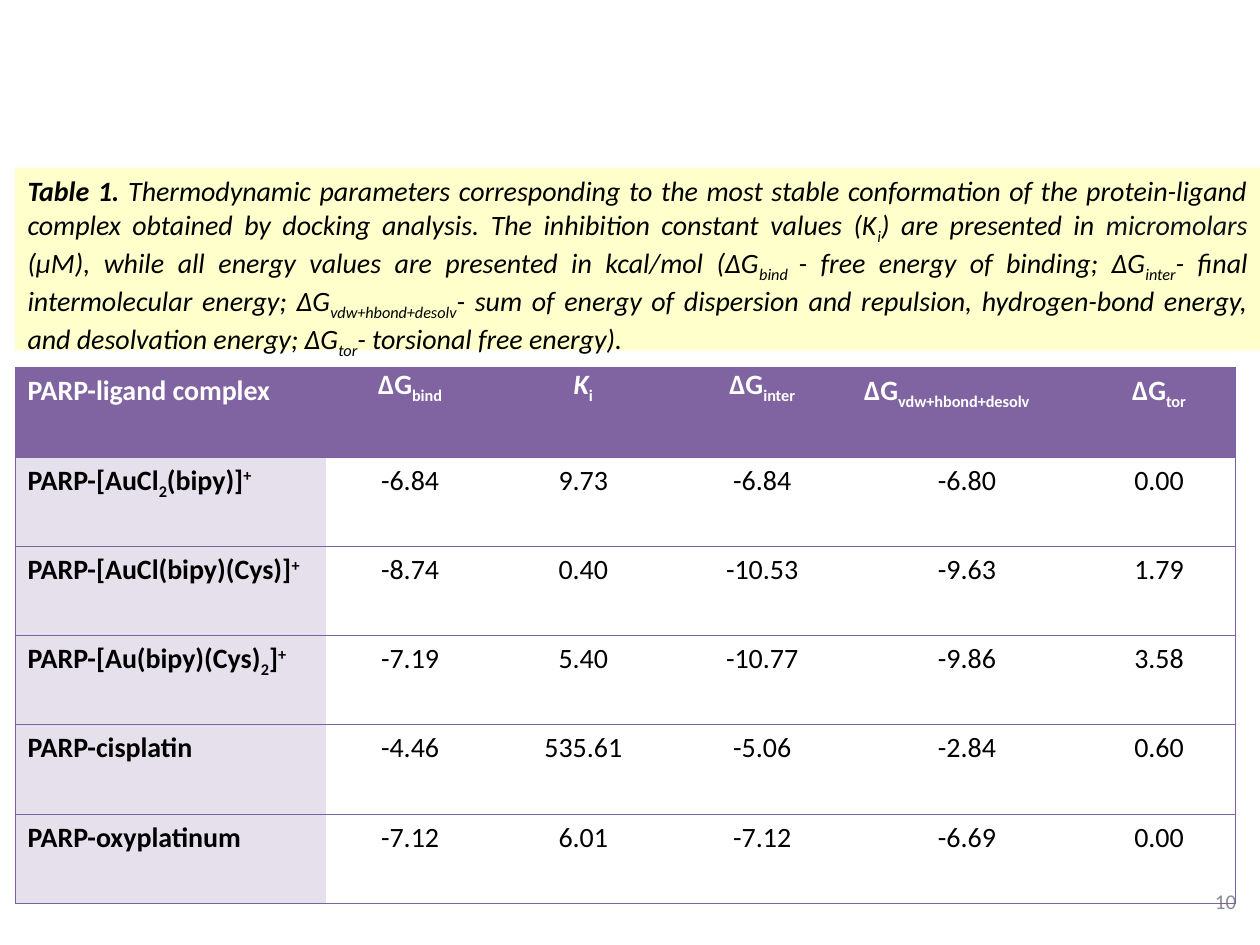
"""Build the slide with docking thermodynamics of PARP-ligand complexes."""
from dataclasses import dataclass

import pptx
import pptx.dml.color
import pptx.enum.shapes
import pptx.enum.text
import pptx.oxml
import pptx.oxml.ns
import pptx.util
from lxml import etree

Inches = pptx.util.Inches
ALIGN = pptx.enum.text.PP_ALIGN
ANCHOR = pptx.enum.text.MSO_ANCHOR
COLORS = {
    "header": "8064A2", "border": "7D60A0", "label": "E6E0EC", "caption": "FFFFCC",
    "white": "FFFFFF", "black": "000000", "ink": "0E101A", "number": "8C8C8C",
}
SUB, SUPER = -25, 30


@dataclass(frozen=True)
class Run:
    text: str
    base: int = 0
    bold: bool = False
    italic: bool = False
    color: str = "black"
    size: int = 16


@dataclass(frozen=True)
class Header:
    symbol: str
    sub: str = ""
    align: ALIGN = ALIGN.CENTER
    tight: bool = False
    italic: bool = False


@dataclass(frozen=True)
class Complex:
    label: list[tuple[str, int]]
    values: list[str]


HEADERS = [
    Header("PARP-ligand complex", align=ALIGN.LEFT),
    Header("ΔG", "bind", tight=True),
    Header("K", "i", tight=True, italic=True),
    Header("ΔG", "inter", tight=True),
    Header("ΔG", "vdw+hbond+desolv", align=ALIGN.LEFT),
    Header("ΔG", "tor"),
]
COMPLEXES = [
    Complex([("PARP-[AuCl", 0), ("2", SUB), ("(bipy)]", 0), ("+", SUPER)],
            ["-6.84", "9.73", "-6.84", "-6.80", "0.00"]),
    Complex([("PARP-[AuCl(bipy)(Cys)]", 0), ("+", SUPER)],
            ["-8.74", "0.40", "-10.53", "-9.63", "1.79"]),
    Complex([("PARP-[Au(bipy)(Cys)", 0), ("2", SUB), ("]", 0), ("+", SUPER)],
            ["-7.19", "5.40", "-10.77", "-9.86", "3.58"]),
    Complex([("PARP-cisplatin", 0)], ["-4.46", "535.61", "-5.06", "-2.84", "0.60"]),
    Complex([("PARP-oxyplatinum", 0)], ["-7.12", "6.01", "-7.12", "-6.69", "0.00"]),
]
CAPTION = [
    Run("Table 1. ", bold=True, italic=True),
    Run("Thermodynamic parameters corresponding to the most stable conformation of the "
        "protein-ligand complex obtained by docking analysis. The inhibition constant "
        "values (K", italic=True),
    Run("i", SUB, italic=True),
    Run(") are presented in ", italic=True),
    Run("micromolars", italic=True, color="ink"),
    Run(" (μM), while all energy values are presented in kcal/mol (ΔG", italic=True),
    Run("bind ", SUB, italic=True),
    Run("- free energy of binding; ΔG", italic=True),
    Run("inter", SUB, italic=True),
    Run("- final intermolecular energy; ΔG", italic=True),
    Run("vdw+hbond+desolv", SUB, italic=True),
    Run("- sum of energy of dispersion and repulsion, hydrogen-bond energy, "
        "and desolvation energy; ΔG", italic=True),
    Run("tor", SUB, italic=True),
    Run("- torsional free energy).", italic=True),
]
COLUMN_WIDTHS = [2.47, 1.33, 1.42, 1.42, 1.83, 1.22]
TABLE_HEIGHT = 4.25


def rgb(name: str) -> pptx.dml.color.RGBColor:
    """Return a named colour."""
    return pptx.dml.color.RGBColor.from_string(COLORS[name])


def write(tf, runs: list[Run], align: ALIGN) -> None:
    """Write one paragraph run by run."""
    p = tf.paragraphs[0]
    p.alignment = align
    for run in runs:
        r = p.add_run()
        r.text = run.text
        r.font.name = "Calibri"
        r.font.size = pptx.util.Pt(run.size)
        r.font.bold = run.bold
        r.font.italic = run.italic
        r.font.color.rgb = rgb(run.color)
        if run.base:
            r._r.get_or_add_rPr().set("baseline", str(run.base * 1000))


def set_borders(cell, visible: str) -> None:
    """Draw the visible sides of a cell and hide the others."""
    qn = pptx.oxml.ns.qn
    tcPr = cell._tc.get_or_add_tcPr()
    for side in "LRTB":
        ln = etree.SubElement(tcPr, qn(f"a:ln{side}"), w=str(pptx.util.Pt(0.75)))
        if side in visible:
            fill = etree.SubElement(ln, qn("a:solidFill"))
            etree.SubElement(fill, qn("a:srgbClr"), val=COLORS["border"])
        else:
            etree.SubElement(ln, qn("a:noFill"))


def fill_cell(cell, runs: list[Run], align: ALIGN, column: int, fill: str | None) -> None:
    """Set the text, borders and fill of a cell."""
    write(cell.text_frame, runs, align)
    left = "L" if column == 0 else ""
    right = "R" if column == len(COLUMN_WIDTHS) - 1 else ""
    set_borders(cell, "TB" + left + right)
    if fill:
        cell.fill.solid()
        cell.fill.fore_color.rgb = rgb(fill)
    else:
        cell.fill.background()


def add_table(s) -> None:
    """Add the table of thermodynamic parameters."""
    table = s.shapes.add_table(
        len(COMPLEXES) + 1, len(HEADERS), Inches(0.12), Inches(2.92),
        Inches(sum(COLUMN_WIDTHS)), Inches(TABLE_HEIGHT)).table
    table.first_row = table.horz_banding = False
    for column, width in zip(table.columns, COLUMN_WIDTHS):
        column.width = Inches(width)
    for j, header in enumerate(HEADERS):
        cell = table.cell(0, j)
        runs = [Run(header.symbol, bold=True, italic=header.italic, color="white")]
        if header.sub:
            runs.append(Run(header.sub, SUB, bold=True, color="white"))
        if header.tight:
            cell.margin_left = cell.margin_right = Inches(0.07)
            cell.margin_top = cell.margin_bottom = 0
        fill_cell(cell, runs, header.align, j, "header")
    for i, row in enumerate(COMPLEXES, 1):
        label = [Run(text, base, bold=True) for text, base in row.label]
        fill_cell(table.cell(i, 0), label, ALIGN.LEFT, 0, "label")
        for j, value in enumerate(row.values, 1):
            fill_cell(table.cell(i, j), [Run(value)], ALIGN.CENTER, j, None)


def add_caption(s) -> None:
    """Add the shaded table caption."""
    sp = s.shapes.add_shape(pptx.enum.shapes.MSO_SHAPE.RECTANGLE,
                            Inches(0.12), Inches(1.33), Inches(9.88), Inches(1.45))
    sp.shadow.inherit = False
    sp.fill.solid()
    sp.fill.fore_color.rgb = rgb("caption")
    sp.line.fill.background()
    tf = sp.text_frame
    tf.word_wrap = True
    tf.vertical_anchor = ANCHOR.TOP
    write(tf, CAPTION, ALIGN.JUSTIFY)


def add_slide_number(s) -> None:
    """Add the slide number."""
    sp = s.shapes.add_textbox(Inches(7.58), Inches(6.95), Inches(2.33), Inches(0.4))
    tf = sp.text_frame
    tf.word_wrap = True
    tf.vertical_anchor = ANCHOR.MIDDLE
    write(tf, [Run("10", color="number", size=12)], ALIGN.RIGHT)


def main() -> None:
    """Build and save the slide."""
    prs = pptx.Presentation()
    prs.slide_width, prs.slide_height = Inches(10), Inches(7.5)
    s = prs.slides.add_slide(prs.slide_layouts[6])
    add_slide_number(s)
    add_table(s)
    add_caption(s)
    prs.save("out.pptx")


if __name__ == "__main__":
    main()
